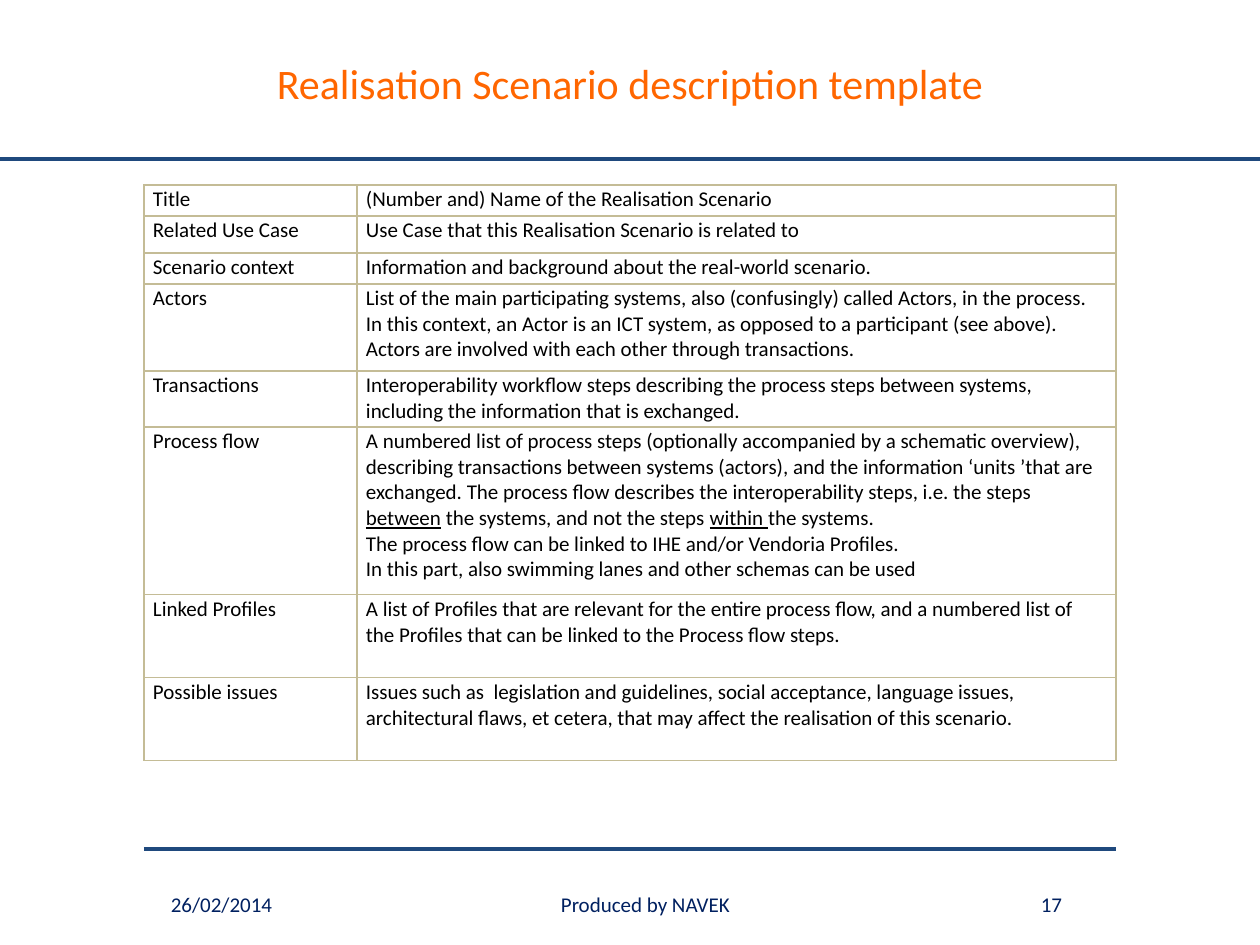
import pptx
import pptx.dml.color
import pptx.enum.shapes
import pptx.enum.text
import pptx.oxml.ns
import pptx.util
import lxml.etree

SCALE = 914400 / 126
FONT = "Calibri"
COLORS = {"title": "FF6600", "rule": "1F497D", "footer": "002060",
          "text": "000000", "border": "C4BC96"}
LEFT, WIDTH = 144, 972
COLUMNS = [213, 759]
ROWS = [
    (31, "Title", [["(Number and) Name of the Realisation Scenario"]]),
    (37, "Related Use Case", [["Use Case that this Realisation Scenario is related to"]]),
    (31, "Scenario context", [["Information and background about the real-world scenario."]]),
    (87, "Actors", [[
        "List of the main participating systems, also (confusingly) called Actors, in the process. "
        "In this context, an Actor is an ICT system, as opposed to a participant (see above). "
        "Actors are involved with each other through transactions."]]),
    (56, "Transactions", [[
        "Interoperability workflow steps describing the process steps between systems, "
        "including the information that is exchanged."]]),
    (168, "Process flow", [
        ["A numbered list of process steps (optionally accompanied by a schematic overview), "
         "describing transactions between systems (actors), and the information ‘units ’that are "
         "exchanged. The process flow describes the interoperability steps, i.e. the steps ",
         "between", " the systems, and not the steps ", "within ", "the systems."],
        ["The process flow can be linked to IHE and/or Vendoria Profiles."],
        ["In this part, also swimming lanes and other schemas can be used"]]),
    (83, "Linked Profiles", [[
        "A list of Profiles that are relevant for the entire process flow, and a numbered list "
        "of the Profiles that can be linked to the Process flow steps."]]),
    (83, "Possible issues", [[
        "Issues such as  legislation and guidelines, social acceptance, language issues, "
        "architectural flaws, et cetera, that may affect the realisation of this scenario."]]),
]


def px(length):
    """Turn px into EMU."""
    return pptx.util.Emu(round(length * SCALE))


def color(name):
    """Look up a named colour."""
    return pptx.dml.color.RGBColor.from_string(COLORS[name])


def add_run(paragraph, text, size, color_name, underline=None):
    """Add one formatted run to a paragraph."""
    run = paragraph.add_run()
    run.text = text
    run.font.name = FONT
    run.font.size = pptx.util.Pt(size)
    run.font.color.rgb = color(color_name)
    run.font.underline = underline


def fill_centred(shape, text, size, color_name):
    """Put one centred line of text in a shape."""
    frame = shape.text_frame
    frame.word_wrap = True
    frame.auto_size = pptx.enum.text.MSO_AUTO_SIZE.NONE
    frame.vertical_anchor = pptx.enum.text.MSO_ANCHOR.MIDDLE
    paragraph = frame.paragraphs[0]
    paragraph.alignment = pptx.enum.text.PP_ALIGN.CENTER
    add_run(paragraph, text, size, color_name)


def add_rule(slide, left, top, width):
    """Draw a horizontal rule."""
    rule = slide.shapes.add_connector(
        pptx.enum.shapes.MSO_CONNECTOR.STRAIGHT,
        px(left), px(top), px(left + width), px(top))
    rule.line.color.rgb = color("rule")
    rule.line.width = pptx.util.Pt(2.25)
    lxml.etree.SubElement(rule._element.spPr, pptx.oxml.ns.qn("a:effectLst"))


def add_header(slide, left, top, width, height):
    """Place the title and the rule that closes the header."""
    title = slide.shapes.title
    title.left, title.top = px(left + 218), px(top + 33)
    title.width, title.height = px(width - 436), px(100)
    fill_centred(title, "Realisation Scenario description template", 24, "title")
    add_rule(slide, left, top + height, width)


def add_borders(cell):
    """Outline all four sides of a cell."""
    properties = cell._tc.get_or_add_tcPr()
    for side in ("lnL", "lnR", "lnT", "lnB"):
        line = lxml.etree.SubElement(
            properties, pptx.oxml.ns.qn("a:" + side), w=str(pptx.util.Pt(1)))
        fill = lxml.etree.SubElement(line, pptx.oxml.ns.qn("a:solidFill"))
        lxml.etree.SubElement(fill, pptx.oxml.ns.qn("a:srgbClr"), val=COLORS["border"])


def fill_cell(cell, paragraphs):
    """Format a cell and write its paragraphs, underlining every second run."""
    add_borders(cell)
    cell.fill.background()
    cell.margin_left = cell.margin_right = px(9)
    cell.margin_top = cell.margin_bottom = px(2)
    frame = cell.text_frame
    for index, runs in enumerate(paragraphs):
        paragraph = frame.add_paragraph() if index else frame.paragraphs[0]
        for position, text in enumerate(runs):
            add_run(paragraph, text, 12, "text", True if position % 2 else None)


def add_template_table(slide, left, top, width):
    """Build the table of scenario fields."""
    height = sum(row[0] for row in ROWS)
    table = slide.shapes.add_table(
        len(ROWS), len(COLUMNS), px(left), px(top), px(width), px(height)).table
    table.first_row = table.horz_banding = False
    for column, column_width in zip(table.columns, COLUMNS):
        column.width = px(column_width)
    for index, (row_height, label, paragraphs) in enumerate(ROWS):
        table.rows[index].height = px(row_height)
        fill_cell(table.cell(index, 0), [[label]])
        fill_cell(table.cell(index, 1), paragraphs)


def add_footer(slide, left, top, width):
    """Place the footer rule with date, producer and page number."""
    add_rule(slide, left, top, width)
    for offset, box_width, text in ((0, 155, "26/02/2014"),
                                    (189, 625, "Produced by NAVEK"),
                                    (843, 129, "17")):
        box = slide.shapes.add_textbox(
            px(left + offset), px(top + 30), px(box_width), px(50))
        fill_centred(box, text, 12, "footer")


def main():
    """Build and save the presentation."""
    presentation = pptx.Presentation()
    presentation.slide_width, presentation.slide_height = px(1260), px(945)
    slide = presentation.slides.add_slide(presentation.slide_layouts[5])
    add_header(slide, 0, 0, 1260, 159)
    add_template_table(slide, LEFT, 185, WIDTH)
    add_footer(slide, LEFT, 849, WIDTH)
    presentation.save("out.pptx")


if __name__ == "__main__":
    main()
